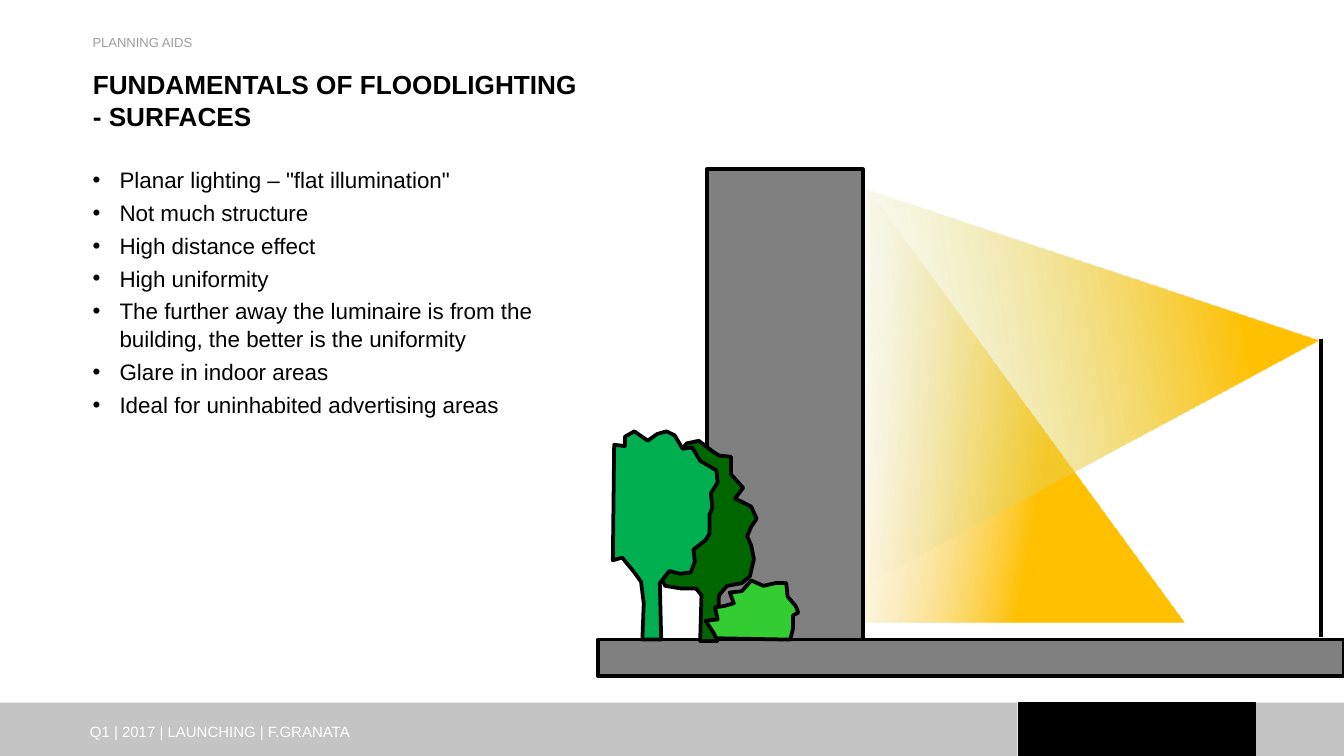
from pptx import Presentation
from pptx.dml.color import RGBColor
from pptx.enum.shapes import MSO_CONNECTOR, MSO_SHAPE
from pptx.enum.text import MSO_ANCHOR, PP_ALIGN
from pptx.oxml.ns import qn
from pptx.util import Cm, Pt
from lxml import etree

RECT = MSO_SHAPE.RECTANGLE
LINE = MSO_CONNECTOR.STRAIGHT
TOP = MSO_ANCHOR.TOP
LEFT = PP_ALIGN.LEFT

SIZE = (25.4, 14.29)
GRID = Cm(0.0254)
INK = "000000"
GREY = "808080"

TITLE = "FUNDAMENTALS OF FLOODLIGHTING\v- SURFACES"
HEAD = ["PLANNING AIDS"]
FOOT = ["Q1 | 2017 | LAUNCHING | F.GRANATA"]
POINTS = [
    "Planar lighting – \"flat illumination\"",
    "Not much structure",
    "High distance effect",
    "High uniformity",
    "The further away the luminaire is from the building, the better is the uniformity",
    "Glare in indoor areas",
    "Ideal for uninhabited advertising areas",
]

BANDS = [
    ((0, 13.28, 25.4, 1.01), "C4C4C4", None, 0),
    ((19.23, 13.28, 4.5, 1.01), "FFFFFF", None, 0),
    ((19.25, 13.28, 4.47, 1.01), INK, INK, 0.75),
]
WALLS = [
    ((11.3, 12.09, 14.1, 0.69), GREY, INK, 2),
    ((13.36, 3.2, 2.95, 8.89), GREY, INK, 2),
]
POST = (24.97, 6.4, 24.97, 12.04)

LOW = ([(881, 463), (638, 130), (638, 463)], "FFC000", "F2F2F2", 0.41, 170)
HIGH = ([(981, 253), (645, 141), (645, 434)], "FFC000", "CFE3A7", 0.18, 190)

PLANTS = [
    ("006600", [
        (534, 477), (535, 443), (541, 436), (552, 434), (558, 429), (561, 416),
        (559, 406), (556, 399), (559, 392), (563, 386), (559, 377), (547, 371),
        (553, 363), (544, 353), (544, 340), (535, 339), (529, 335), (520, 328),
        (511, 330), (502, 341), (487, 348), (482, 366), (484, 382), (476, 389),
        (485, 416), (495, 436), (507, 438), (518, 438), (522, 443), (521, 477)]),
    ("33CC33", [
        (588, 476), (590, 468), (590, 458), (594, 456), (592, 451), (586, 444),
        (585, 434), (577, 434), (568, 436), (559, 432), (552, 440), (543, 441),
        (546, 449), (539, 451), (532, 452), (534, 461), (525, 462), (531, 471),
        (533, 475)]),
    ("00B050", [
        (478, 476), (492, 476), (491, 434), (498, 425), (506, 427), (514, 426),
        (517, 418), (516, 409), (525, 402), (528, 397), (528, 383), (530, 378),
        (529, 367), (534, 359), (533, 350), (521, 343), (515, 333), (508, 334),
        (502, 324), (496, 321), (489, 323), (482, 328), (472, 321), (465, 325),
        (465, 332), (457, 331), (456, 417), (463, 415), (472, 426), (477, 433),
        (479, 449)]),
]


def tint(code):
    return RGBColor.from_string(code)


def assign(item, values):
    for name, value in values.items():
        setattr(item, name, value)


def paint(shape, fill, line, width):
    shape.shadow.inherit = False
    if fill:
        shape.fill.solid()
        shape.fill.fore_color.rgb = tint(fill)
    if line:
        shape.line.color.rgb = tint(line)
        shape.line.width = Pt(width)
    else:
        shape.line.fill.background()


def block(box, fill, line, width):
    paint(slide.shapes.add_shape(RECT, *map(Cm, box)), fill, line, width)


def trace(dots):
    pen = slide.shapes.build_freeform(*dots[0], scale=GRID)
    pen.add_line_segments(dots[1:], close=True)
    return pen.convert_to_shape()


def beam(dots, near, far, start, angle):
    shape = trace(dots)
    paint(shape, None, None, 0)
    shape.fill.gradient()
    shape.fill.gradient_angle = angle
    for stop, code, place in zip(shape.fill.gradient_stops, (near, far), (start, 1)):
        stop.color.rgb = tint(code)
        stop.position = place
    clear = shape.element.findall(".//" + qn("a:srgbClr"))[1]
    etree.SubElement(clear, qn("a:alpha"), val="0")


def style(frame, size, color, bold=False):
    assign(frame, {"word_wrap": True, "vertical_anchor": TOP})
    for para in frame.paragraphs:
        para.alignment = LEFT
        assign(para.font, {"name": "Arial", "size": Pt(size), "bold": bold})
        para.font.color.rgb = tint(color)


def write(box, lines, size, color, dots=False):
    frame = slide.shapes.add_textbox(*map(Cm, box)).text_frame
    frame.text = "\n".join(lines)
    for spot, para in enumerate(frame.paragraphs):
        if dots:
            prop = para._p.get_or_add_pPr()
            prop.set("marL", str(Cm(0.51)))
            prop.set("indent", str(-Cm(0.51)))
            etree.SubElement(prop, qn("a:buFont"), typeface="Arial")
            etree.SubElement(prop, qn("a:buChar"), char="•")
            para.line_spacing = 1.05
        if spot:
            para.space_before = Pt(size * 0.2)
    style(frame, size, color)


deck = Presentation()
deck.slide_width, deck.slide_height = map(Cm, SIZE)
slide = deck.slides.add_slide(deck.slide_layouts[5])

title = slide.shapes.title
assign(title, dict(zip(("left", "top", "width", "height"),
                       map(Cm, (1.5, 1.17, 22.2, 2.39)))))
title.text_frame.text = TITLE
style(title.text_frame, 14, INK, True)

for band in BANDS:
    block(*band)
write((1.45, 13.54, 7.24, 0.41), FOOT, 8, "FFFFFF")
beam(*LOW)
write((1.5, 3, 9.14, 6.2), POINTS, 12, INK, True)
for wall in WALLS:
    block(*wall)
for fill, dots in PLANTS:
    paint(trace(dots), fill, INK, 2)

post = slide.shapes.add_connector(LINE, *map(Cm, POST))
assign(post.line, {"width": Pt(2)})
post.line.color.rgb = tint(INK)
etree.SubElement(post.element.spPr, qn("a:effectLst"))

beam(*HIGH)
write((1.5, 0.53, 22.2, 0.61), HEAD, 7, "9C9D9D")

deck.save("out.pptx")
